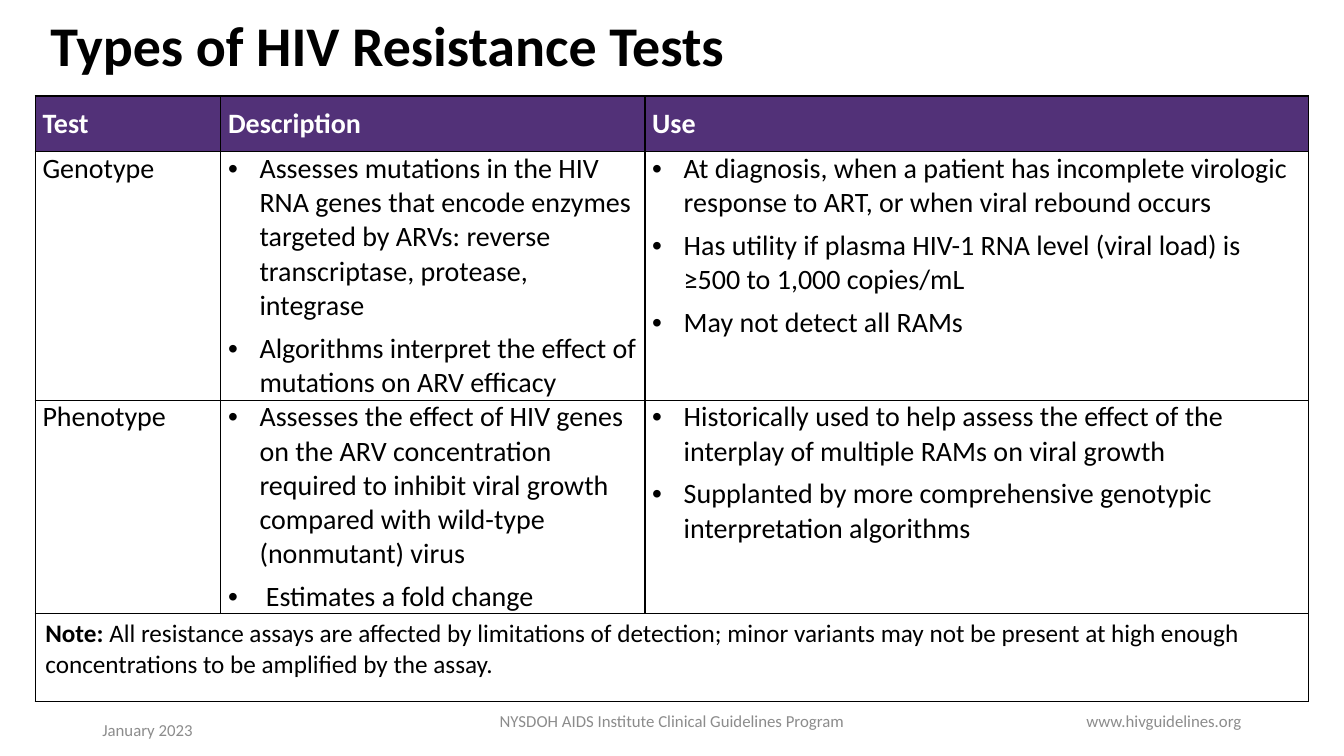
from lxml import etree
from pptx import Presentation
from pptx.dml.color import RGBColor
from pptx.enum.text import MSO_ANCHOR, MSO_AUTO_SIZE, PP_ALIGN
from pptx.oxml.ns import qn
from pptx.util import Pt

MIDDLE, TOP = MSO_ANCHOR.MIDDLE, MSO_ANCHOR.TOP
LEFT, CENTER, RIGHT = PP_ALIGN.LEFT, PP_ALIGN.CENTER, PP_ALIGN.RIGHT
TITLE_ONLY = 5
FONT = "Calibri"
COLORS = {"text": "000000", "header_text": "FFFFFF", "header_fill": "523178",
          "border": "000000", "footer": "8C8C8C"}

COLUMN_WIDTHS = [132.5, 303, 474]
ROW_HEIGHTS = [39.6, 177.6, 152.6, 62.6]
HEADERS = ["Test", "Description", "Use"]
TESTS = [
    ("Genotype",
     ["Assesses mutations in the HIV RNA genes that encode enzymes targeted by ARVs: "
      "reverse transcriptase, protease, integrase",
      "Algorithms interpret the effect of mutations on ARV efficacy"],
     ["At diagnosis, when a patient has incomplete virologic response to ART, "
      "or when viral rebound occurs",
      "Has utility if plasma HIV-1 RNA level (viral load) is ≥500 to 1,000 copies/mL",
      "May not detect all RAMs"]),
    ("Phenotype",
     ["Assesses the effect of HIV genes on the ARV concentration required to inhibit "
      "viral growth compared with wild-type (nonmutant) virus",
      " Estimates a fold change"],
     ["Historically used to help assess the effect of the interplay of multiple RAMs "
      "on viral growth",
      "Supplanted by more comprehensive genotypic interpretation algorithms"]),
]
NOTE = ("All resistance assays are affected by limitations of detection; minor variants may "
        "not be present at high enough concentrations to be amplified by the assay.")
FOOTERS = [
    ("NYSDOH AIDS Institute Clinical Guidelines Program", 318, 500.4, 324, CENTER),
    ("www.hivguidelines.org", 678, 500.4, 216, RIGHT),
    ("January 2023", 66, 507.2, 216, LEFT),
]


def add_run(paragraph, text, size, color, bold=False):
    run = paragraph.add_run()
    run.text = text
    run.font.name = FONT
    run.font.size = Pt(size)
    run.font.bold = bold
    run.font.color.rgb = RGBColor.from_string(COLORS[color])


def add_bullet(paragraph):
    properties = paragraph._p.get_or_add_pPr()
    properties.set("marL", str(Pt(22.5)))
    properties.set("indent", str(-Pt(22.5)))
    etree.SubElement(properties, qn("a:buFont")).set("typeface", "Arial")
    etree.SubElement(properties, qn("a:buChar")).set("char", "•")


presentation = Presentation()
presentation.slide_width, presentation.slide_height = Pt(960), Pt(540)
slide = presentation.slides.add_slide(presentation.slide_layouts[TITLE_ONLY])

# Title
title = slide.shapes.title
title.left, title.top, title.width, title.height = Pt(28.8), Pt(0.7), Pt(865.4), Pt(67.7)
title.text_frame.auto_size = MSO_AUTO_SIZE.NONE
title.text_frame.vertical_anchor = MIDDLE
paragraph = title.text_frame.paragraphs[0]
paragraph.alignment = LEFT
paragraph.line_spacing = 0.9
add_run(paragraph, "Types of HIV Resistance Tests", 40, "text", bold=True)

# Footer
for text, left, top, width, alignment in FOOTERS:
    footer = slide.shapes.add_textbox(Pt(left), Pt(top), Pt(width), Pt(28.8))
    footer.text_frame.word_wrap = True
    footer.text_frame.vertical_anchor = MIDDLE
    paragraph = footer.text_frame.paragraphs[0]
    paragraph.alignment = alignment
    add_run(paragraph, text, 12, "footer")

# Table grid
table = slide.shapes.add_table(
    len(ROW_HEIGHTS), len(COLUMN_WIDTHS), Pt(25.2), Pt(68.6),
    Pt(sum(COLUMN_WIDTHS)), Pt(sum(ROW_HEIGHTS))).table
table.first_row = table.horz_banding = False
for column, width in zip(table.columns, COLUMN_WIDTHS):
    column.width = Pt(width)
for row, height in zip(table.rows, ROW_HEIGHTS):
    row.height = Pt(height)

for cell in table.iter_cells():
    cell_properties = cell._tc.get_or_add_tcPr()
    for side in ("a:lnL", "a:lnR", "a:lnT", "a:lnB"):
        line = etree.SubElement(cell_properties, qn(side), w=str(Pt(1)))
        line_fill = etree.SubElement(line, qn("a:solidFill"))
        etree.SubElement(line_fill, qn("a:srgbClr"), val=COLORS["border"])
    cell.fill.background()

# Header and test rows
for row_index, contents in enumerate([HEADERS, *TESTS]):
    is_header = row_index == 0
    for column_index, content in enumerate(contents):
        cell = table.cell(row_index, column_index)
        cell.margin_left = cell.margin_right = Pt(5.2)
        cell.margin_top = cell.margin_bottom = 0
        cell.vertical_anchor = MIDDLE if is_header else TOP
        if is_header:
            cell.fill.solid()
            cell.fill.fore_color.rgb = RGBColor.from_string(COLORS["header_fill"])
        bulleted = isinstance(content, list)
        for index, text in enumerate(content if bulleted else [content]):
            paragraph = (cell.text_frame.add_paragraph() if index
                         else cell.text_frame.paragraphs[0])
            if bulleted:
                add_bullet(paragraph)
            if index:
                paragraph.space_before = Pt(6)
            add_run(paragraph, text, 20, "header_text" if is_header else "text", is_header)

# Note row
note_cell = table.cell(3, 0)
note_cell.merge(table.cell(3, 2))
paragraph = note_cell.text_frame.paragraphs[0]
add_run(paragraph, "Note: ", 18, "text", bold=True)
add_run(paragraph, NOTE, 18, "text")

presentation.save("out.pptx")
